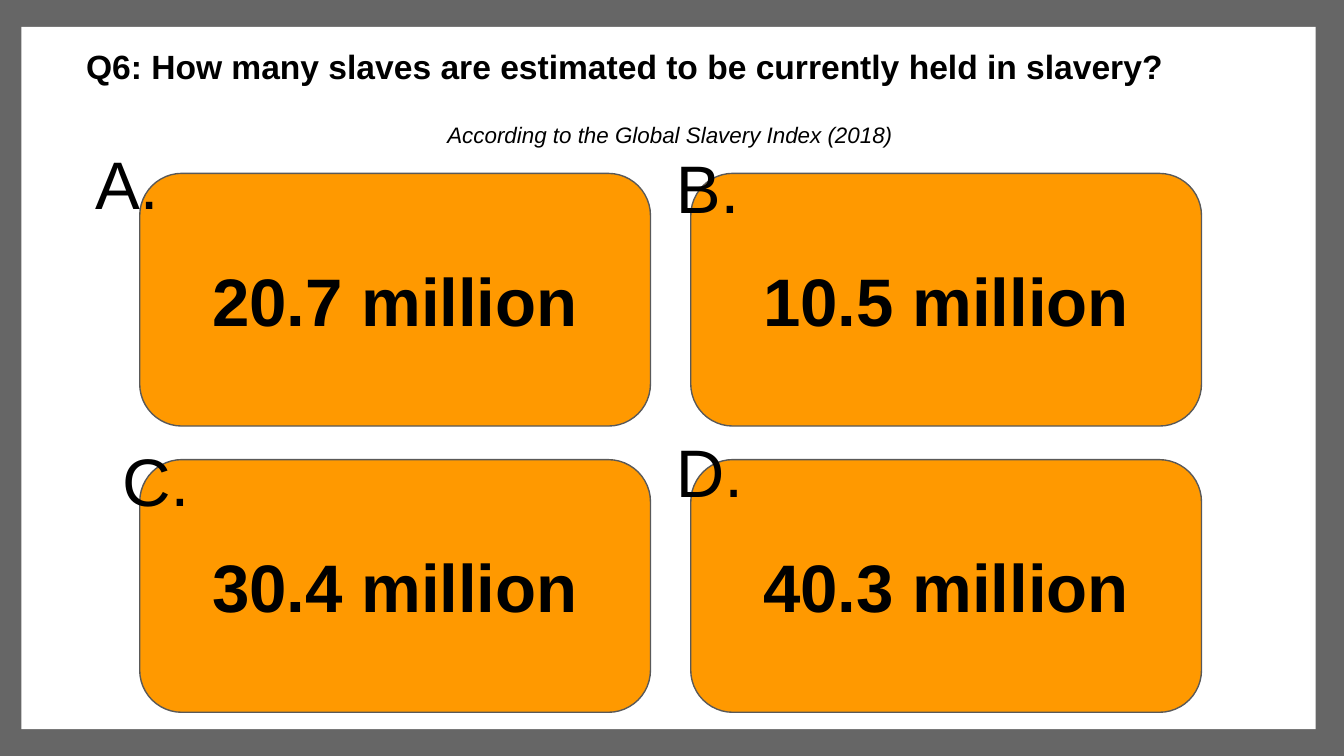
from dataclasses import dataclass

from pptx import Presentation
from pptx.dml.color import RGBColor
from pptx.enum.shapes import MSO_SHAPE
from pptx.enum.text import MSO_ANCHOR, MSO_AUTO_SIZE, PP_ALIGN
from pptx.util import Inches, Pt


@dataclass(frozen=True)
class Theme:
    font: str = "Arial"
    text: str = "000000"
    frame: str = "666666"
    panel: str = "FFFFFF"
    card: str = "FF9900"
    outline: str = "595959"
    title_size: int = 18
    source_size: int = 12
    answer_size: int = 36


THEME = Theme()
PAGE_WIDTH = 10
PAGE_HEIGHT = PAGE_WIDTH * 9 / 16

# Letter, answer, letter offset from the card corner, letter box size
ANSWERS = [
    ("A.", "20.7 million", (-0.43, -0.33), (0.96, 0.79)),
    ("B.", "10.5 million", (-0.21, -0.3), (0.72, 0.72)),
    ("C.", "30.4 million", (-0.23, -0.25), (0.96, 0.72)),
    ("D.", "40.3 million", (-0.21, -0.32), (1.09, 0.72)),
]


def inches(box):
    return [Inches(length) for length in box]


def write(shape, text, size, bold=False, italic=False,
          align=PP_ALIGN.LEFT, anchor=MSO_ANCHOR.TOP):
    frame = shape.text_frame
    frame.word_wrap = True
    frame.auto_size = MSO_AUTO_SIZE.NONE
    frame.vertical_anchor = anchor
    frame.margin_left = frame.margin_right = Inches(0.1)
    frame.margin_top = frame.margin_bottom = Inches(0.1)
    para = frame.paragraphs[0]
    para.alignment = align
    span = para.add_run()
    span.text = text
    span.font.name = THEME.font
    span.font.size = Pt(size)
    span.font.bold = bold
    span.font.italic = italic
    span.font.color.rgb = RGBColor.from_string(THEME.text)


def add_block(page, kind, box, fill, outline=None):
    block = page.shapes.add_shape(kind, *inches(box))
    block.shadow.inherit = False
    block.fill.solid()
    block.fill.fore_color.rgb = RGBColor.from_string(fill)
    if outline:
        block.line.color.rgb = RGBColor.from_string(outline)
        block.line.width = Pt(0.75)
    else:
        block.line.fill.background()
    return block


def add_label(page, box, text, size, **style):
    write(page.shapes.add_textbox(*inches(box)), text, size, **style)


def add_backdrop(page, box):
    left, top, width, height = box
    add_block(page, MSO_SHAPE.RECTANGLE, box, THEME.frame)
    panel = (left + 0.16, top + 0.2, width - 0.37, height - 0.4)
    add_block(page, MSO_SHAPE.RECTANGLE, panel, THEME.panel)


def add_heading(page, box):
    left, top, width, _ = box
    title = page.shapes.title
    title.left, title.top, title.width, title.height = inches((left, top, width, 0.53))
    write(title, "Q6: How many slaves are estimated to be currently held in slavery?",
          THEME.title_size, bold=True)
    # Bring the title in front of the backdrop
    title.element.getparent().append(title.element)
    add_label(page, (left + 2.69, top + 0.56, 3.55, 0.46),
              "According to the Global Slavery Index (2018)",
              THEME.source_size, italic=True)


def add_answers(page, box, gap_x=0.3, gap_y=0.25):
    """Lay the answer cards out in two columns, then their letters on top."""
    left, top, width, height = box
    card_width, card_height = (width - gap_x) / 2, (height - gap_y) / 2
    corners = [(left + column * (card_width + gap_x), top + row * (card_height + gap_y))
               for row in range(2) for column in range(2)]

    for corner, (_, answer, _, _) in zip(corners, ANSWERS):
        card = add_block(page, MSO_SHAPE.ROUNDED_RECTANGLE,
                         (*corner, card_width, card_height), THEME.card, THEME.outline)
        write(card, answer, THEME.answer_size, bold=True,
              align=PP_ALIGN.CENTER, anchor=MSO_ANCHOR.MIDDLE)

    for (x, y), (letter, _, (shift_x, shift_y), size) in zip(corners, ANSWERS):
        add_label(page, (x + shift_x, y + shift_y, *size), letter, THEME.answer_size)


def main():
    deck = Presentation()
    deck.slide_width, deck.slide_height = Inches(PAGE_WIDTH), Inches(PAGE_HEIGHT)
    title_only = deck.slide_layouts[5]
    page = deck.slides.add_slide(title_only)
    add_backdrop(page, (0, 0, PAGE_WIDTH, PAGE_HEIGHT))
    add_heading(page, (0.54, 0.24, 8.92, 1.02))
    add_answers(page, (1.04, 1.29, 7.9, 4.01))
    deck.save("out.pptx")


if __name__ == "__main__":
    main()
